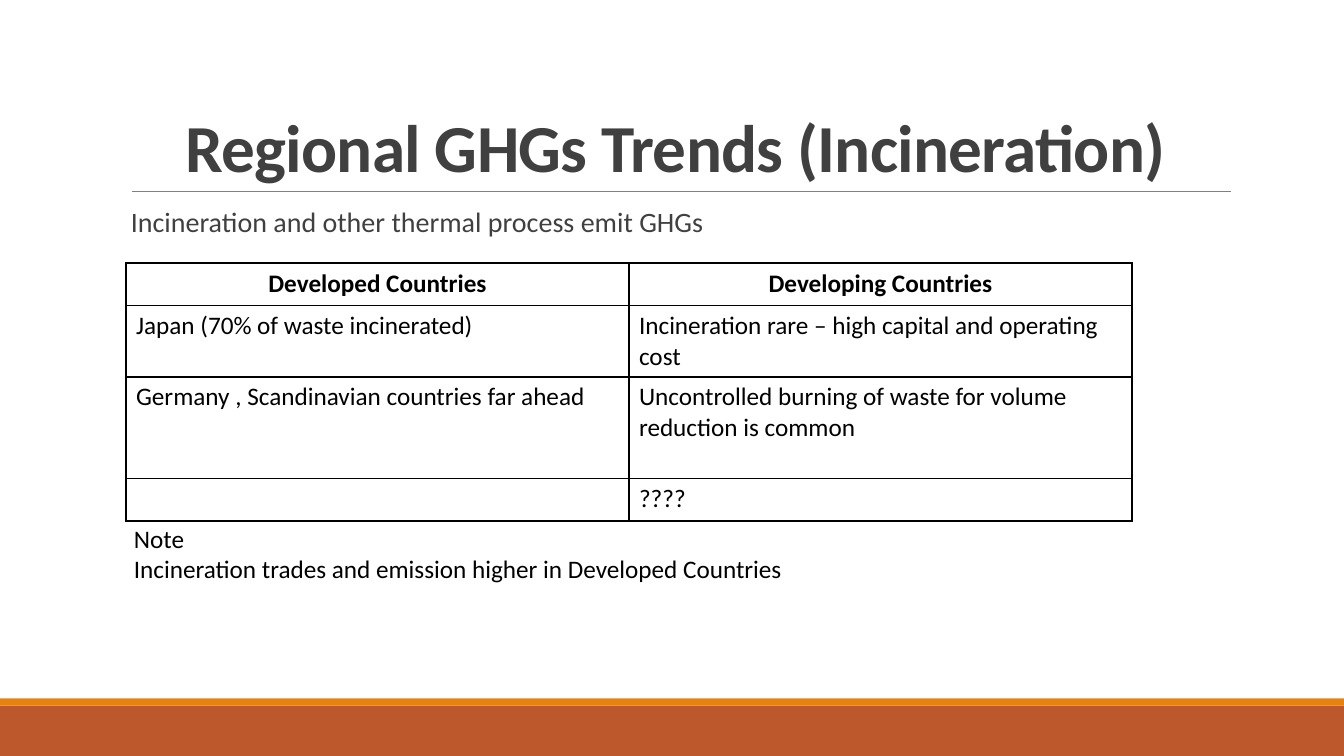
from lxml.etree import SubElement
from pptx import Presentation
from pptx.dml.color import RGBColor
from pptx.enum.shapes import MSO_CONNECTOR, MSO_SHAPE
from pptx.enum.text import MSO_ANCHOR, PP_ALIGN
from pptx.oxml.ns import qn
from pptx.util import Inches, Pt

BLACK, DARK_GRAY, RULE_GRAY = "000000", "404040", "808080"
RUST, ORANGE = "BD582C", "E48312"
SLIDE_COLUMNS, SLIDE_ROWS = 133.33, 75


def color(hex_value):
    return RGBColor.from_string(hex_value)


def grid(units):
    """Length of a number of grid columns or rows, each a tenth of an inch."""
    return Inches(units / 10)


class SlideBuilder:
    font_name = "Calibri"
    border_width = Pt(1)

    def __init__(self, presentation):
        self.slide = presentation.slides.add_slide(presentation.slide_layouts[6])

    def style_paragraph(self, paragraph, size, hex_value, bold=False, align=PP_ALIGN.LEFT):
        paragraph.alignment = align
        font = paragraph.font
        font.name, font.size, font.bold = self.font_name, Pt(size), bold
        font.color.rgb = color(hex_value)

    def band(self, top, height, fill):
        shape = self.slide.shapes.add_shape(
            MSO_SHAPE.RECTANGLE, 0, grid(top), grid(SLIDE_COLUMNS), grid(height))
        shape.shadow.inherit = False
        shape.fill.solid()
        shape.fill.fore_color.rgb = color(fill)
        shape.line.fill.background()

    def rule(self, left, right, row, hex_value, width):
        line = self.slide.shapes.add_connector(
            MSO_CONNECTOR.STRAIGHT, grid(left), grid(row), grid(right), grid(row))
        line.line.color.rgb = color(hex_value)
        line.line.width = Pt(width)
        SubElement(line.element.spPr, qn("a:effectLst"))

    def text(self, box, lines, size, hex_value=BLACK, bold=False, align=PP_ALIGN.LEFT,
             anchor=MSO_ANCHOR.TOP, line_spacing=1.0, tracking=0):
        """Text box; tracking is the letter spacing in hundredths of a point."""
        shape = self.slide.shapes.add_textbox(*map(grid, box))
        frame = shape.text_frame
        frame.word_wrap = True
        frame.vertical_anchor = anchor
        frame.text = "\n".join(lines)
        for paragraph in frame.paragraphs:
            self.style_paragraph(paragraph, size, hex_value, bold, align)
            paragraph.line_spacing = line_spacing
            if tracking:
                for run in paragraph.runs:
                    run.font._element.set("spc", str(tracking))

    def border_cell(self, cell):
        properties = cell._tc.get_or_add_tcPr()
        for side in ("lnL", "lnR", "lnT", "lnB"):
            line = SubElement(properties, qn(f"a:{side}"), w=str(self.border_width))
            fill = SubElement(line, qn("a:solidFill"))
            SubElement(fill, qn("a:srgbClr"), val=BLACK)

    def table(self, left, top, column_width, row_heights, contents, size):
        column_count = len(contents[0])
        table = self.slide.shapes.add_table(
            len(contents), column_count, grid(left), grid(top),
            grid(column_width * column_count), grid(sum(row_heights))).table
        table.horz_banding = False
        for column in table.columns:
            column.width = grid(column_width)
        for row_index, (row, height, texts) in enumerate(zip(table.rows, row_heights, contents)):
            row.height = grid(height)
            is_header = row_index == 0
            align = PP_ALIGN.CENTER if is_header else PP_ALIGN.LEFT
            for cell, text in zip(row.cells, texts):
                cell.text = text
                self.style_paragraph(cell.text_frame.paragraphs[0], size, BLACK, is_header, align)
                self.border_cell(cell)
                cell.fill.background()


def main():
    presentation = Presentation()
    presentation.slide_width = grid(SLIDE_COLUMNS)
    presentation.slide_height = grid(SLIDE_ROWS)
    builder = SlideBuilder(presentation)

    builder.band(70, 5, RUST)
    builder.band(69.3, 0.7, ORANGE)
    builder.rule(13.1, 122.1, 19, RULE_GRAY, 0.5)
    builder.text((12, 3.1, 110, 15.9), ["Regional GHGs Trends (Incineration)"], 48, DARK_GRAY,
                 bold=True, align=PP_ALIGN.CENTER, anchor=MSO_ANCHOR.BOTTOM,
                 line_spacing=0.85, tracking=-50)
    builder.text((12, 20.2, 110, 5), ["Incineration and other thermal process emit GHGs"],
                 20, DARK_GRAY, line_spacing=0.9)
    builder.table(12.5, 26.1, 49.9, (4.2, 7.1, 10.1, 4.2), [
        ("Developed Countries", "Developing Countries"),
        ("Japan (70% of waste incinerated)",
         "Incineration rare – high capital and operating cost"),
        ("Germany , Scandinavian countries far ahead",
         "Uncontrolled burning of waste for volume reduction is common"),
        ("", "????"),
    ], 18)
    builder.text((12.3, 51.4, 66.7, 7.1),
                 ["Note", "Incineration trades and emission higher in Developed Countries"], 18)

    presentation.save("out.pptx")


if __name__ == "__main__":
    main()
